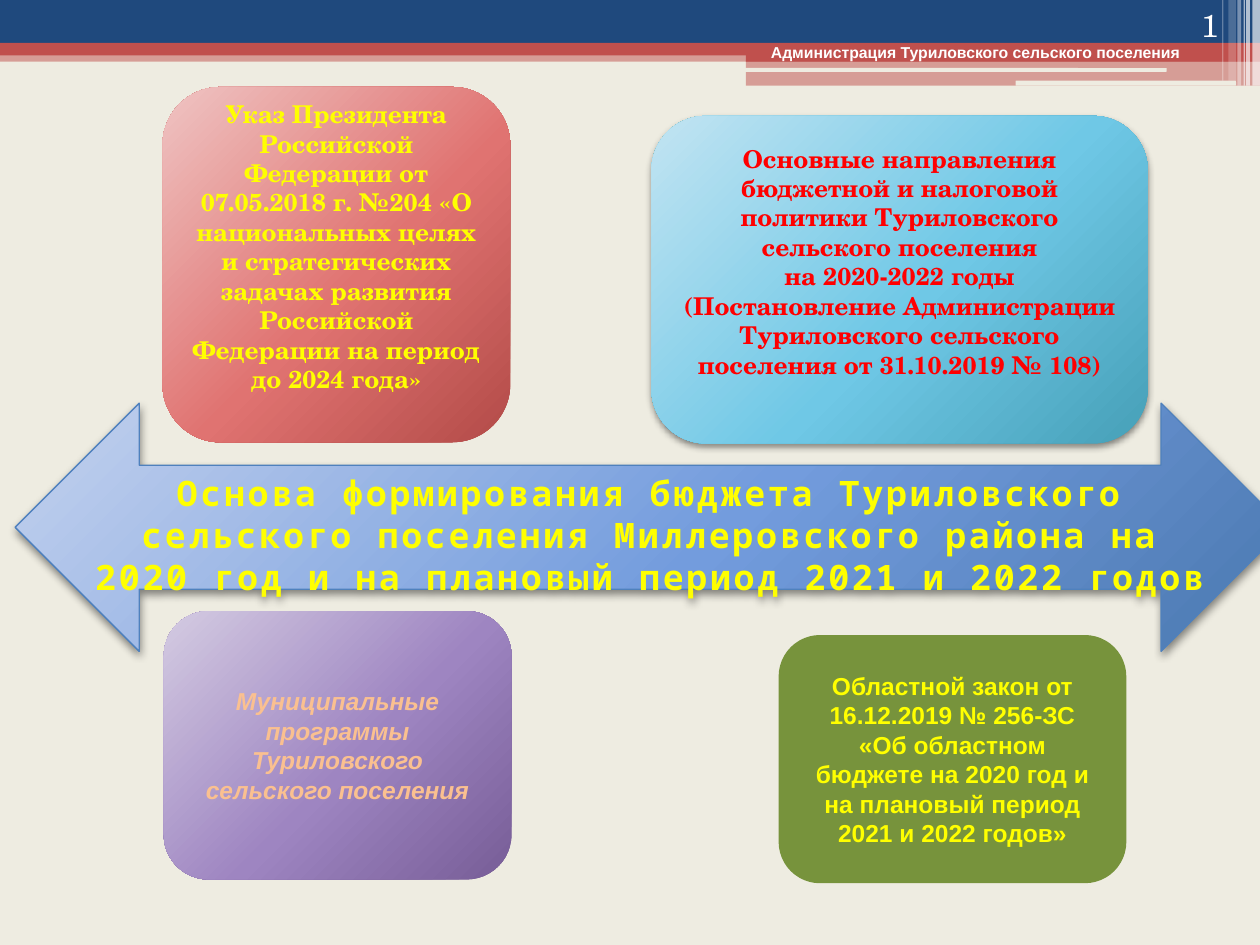
from lxml import etree
from pptx import Presentation
from pptx.dml.color import RGBColor
from pptx.enum.shapes import MSO_SHAPE
from pptx.enum.text import MSO_ANCHOR, PP_ALIGN
from pptx.oxml.ns import qn
from pptx.util import Pt

PX = 9144  # EMU in one px, 100 px to the inch

RECTANGLE = MSO_SHAPE.RECTANGLE
ROUNDED = MSO_SHAPE.ROUNDED_RECTANGLE
ARROW = MSO_SHAPE.LEFT_RIGHT_ARROW
TOP, MIDDLE, BOTTOM = MSO_ANCHOR.TOP, MSO_ANCHOR.MIDDLE, MSO_ANCHOR.BOTTOM
LEFT, CENTER, RIGHT = PP_ALIGN.LEFT, PP_ALIGN.CENTER, PP_ALIGN.RIGHT

CREAM = RGBColor(0xEE, 0xEC, 0xE1)
NAVY = RGBColor(0x1F, 0x49, 0x7D)
BRICK = RGBColor(0xC0, 0x50, 0x4D)
WHITE = RGBColor(0xFF, 0xFF, 0xFF)
BLACK = RGBColor(0, 0, 0)
YELLOW = RGBColor(0xFF, 0xFF, 0)
RED = RGBColor(0xFF, 0, 0)
PEACH = RGBColor(0xFA, 0xC0, 0x90)
OLIVE = RGBColor(0x77, 0x93, 0x3C)
STEEL = RGBColor(0x4F, 0x81, 0xBD)

# Light, middle and dark colour of each gradient
RED_SHADES = (RGBColor(0xEF, 0xC4, 0xC3), RGBColor(0xE0, 0x73, 0x71), RGBColor(0xB3, 0x4B, 0x48))
AQUA_SHADES = (RGBColor(0xC2, 0xE4, 0xF2), RGBColor(0x6F, 0xC8, 0xE6), RGBColor(0x46, 0xA0, 0xB8))
PURPLE_SHADES = (RGBColor(0xD4, 0xCB, 0xE2), RGBColor(0x9E, 0x85, 0xC1), RGBColor(0x77, 0x5D, 0x97))
BLUE_SHADES = (RGBColor(0xC4, 0xD2, 0xEE), RGBColor(0x73, 0x9C, 0xDD), RGBColor(0x4A, 0x78, 0xB0))
GRADIENT_STOPS = (0, 55, 100)

SANS, SERIF, MONO = "Arial", "TeX Gyre Schola", "Noto Sans Mono"


def add_element(parent, tag, **attributes):
    element = etree.SubElement(parent, qn(tag))
    for name, value in attributes.items():
        element.set(name, str(value))
    return element


def set_alpha(color_element, percent):
    add_element(color_element, "a:alpha", val=percent * 1000)


def set_gradient(shape, shades):
    shape.fill.gradient()
    gradient = shape._element.spPr.find(qn("a:gradFill"))
    for child in list(gradient):
        gradient.remove(child)
    stops = add_element(gradient, "a:gsLst")
    for position, color in zip(GRADIENT_STOPS, shades):
        stop = add_element(stops, "a:gs", pos=position * 1000)
        add_element(stop, "a:srgbClr", val=color)
    circle = add_element(gradient, "a:path", path="circle")
    add_element(circle, "a:fillToRect", l=-40000, t=-90000, r=140000, b=190000)


def set_shadow(shape):
    effects = shape._element.spPr.find(qn("a:effectLst"))
    shadow = add_element(effects, "a:outerShdw", blurRad=Pt(4), dist=Pt(2),
                         dir=90 * 60000, rotWithShape=0)
    set_alpha(add_element(shadow, "a:srgbClr", val=BLACK), 45)


def add_box(slide, kind, box, fill, alpha=100, shadow=False):
    """Add a borderless shape; fill is one colour or a tuple of shades."""
    shape = slide.shapes.add_shape(kind, *(length * PX for length in box))
    shape.shadow.inherit = False
    shape.line.fill.background()
    if isinstance(fill, RGBColor):
        shape.fill.solid()
        shape.fill.fore_color.rgb = fill
        if alpha < 100:
            set_alpha(shape._element.spPr.find(qn("a:solidFill"))[0], alpha)
    else:
        set_gradient(shape, fill)
    if shadow:
        set_shadow(shape)
    return shape


def write(shape, lines, font, size, color, align=CENTER, anchor=MIDDLE,
          bold=True, italic=False):
    frame = shape.text_frame
    frame.word_wrap = True
    frame.vertical_anchor = anchor
    frame.text = "\n".join(lines)
    for paragraph in frame.paragraphs:
        paragraph.alignment = align
        paragraph.font.name = font
        paragraph.font.size = Pt(size)
        paragraph.font.bold = bold
        paragraph.font.italic = italic
        paragraph.font.color.rgb = color


def add_label(slide, box, text, *style, **options):
    label = slide.shapes.add_textbox(*(length * PX for length in box))
    write(label, [text], *style, **options)


def add_header(slide, left, top, width):
    # Full-width bands and the tab on the right
    tab = 592
    for x, y, height, color, alpha in (
        (0, 40, 9, BRICK, 50),
        (0, 0, 34, NAVY, 100),
        (0, 34, 10, BRICK, 100),
        (tab, 39, 10, BRICK, 100),
        (tab, 48, 20, BRICK, 50),
    ):
        add_box(slide, RECTANGLE, (left + x, top + y, width - x, height), color, alpha)

    # Cream slits in the tab
    for x, y, slit_width, height in ((591, 54, 335, 3), (806, 64, 175, 4)):
        add_box(slide, ROUNDED, (left + x, top + y, slit_width, height), CREAM)

    # Translucent stripes, given from the right edge
    for offset, stripe_width, height, alpha in (
        (6, 6, 68, 65), (11, 3, 68, 65), (13, 1, 68, 60),
        (18, 3, 68, 40), (25, 6, 64, 20), (30, 1, 64, 30),
    ):
        add_box(slide, RECTANGLE, (left + width - offset, top, stripe_width, height),
                WHITE, alpha)

    add_label(slide, (left + 602, top + 29, 370, 25),
              "Администрация Туриловского сельского поселения",
              SANS, 9, WHITE, align=LEFT, anchor=TOP)
    add_label(slide, (left + 894, top, 83, 40), "1", SERIF, 18, WHITE,
              align=RIGHT, anchor=BOTTOM, bold=False)


def add_card(slide, box, fill, lines, font, color, bottom=5, shadow=False, italic=False):
    card = add_box(slide, ROUNDED, box, fill, shadow=shadow)
    write(card, lines, font, 14, color, italic=italic)
    card.text_frame.margin_bottom = bottom * PX


def add_arrow(slide, box, text):
    arrow = add_box(slide, ARROW, box, BLUE_SHADES, shadow=True)
    arrow.line.color.rgb = STEEL
    arrow.line.width = Pt(0.75)
    write(arrow, [text], MONO, 20, YELLOW, anchor=TOP)
    for run in arrow.text_frame.paragraphs[0].runs:
        run.font._element.set("spc", "150")  # letter spacing of 1.5 pt


def main():
    presentation = Presentation()
    presentation.slide_width = 1000 * PX
    presentation.slide_height = 750 * PX
    slide = presentation.slides.add_slide(presentation.slide_layouts[6])
    slide.background.fill.solid()
    slide.background.fill.fore_color.rgb = CREAM

    add_header(slide, 0, 0, 1000)

    # Four sources around the arrow
    add_card(slide, (129, 69, 276, 282), RED_SHADES, [
        "Указ Президента Российской Федерации от 07.05.2018 г. №204 «О национальных "
        "целях и стратегических задачах развития Российской Федерации на период "
        "до 2024 года»"], SERIF, YELLOW, bottom=34)
    add_card(slide, (517, 92, 394, 260), AQUA_SHADES, [
        "Основные направления бюджетной и налоговой политики Туриловского "
        "сельского поселения",
        "на 2020-2022 годы",
        "(Постановление Администрации Туриловского сельского поселения "
        "от 31.10.2019 № 108)"], SERIF, RED, bottom=34, shadow=True)
    add_card(slide, (130, 485, 276, 213), PURPLE_SHADES, [
        "Муниципальные программы Туриловского сельского поселения"],
        SANS, PEACH, italic=True)
    add_card(slide, (618, 504, 276, 197), OLIVE, [
        "Областной закон от 16.12.2019 № 256-ЗС «Об областном бюджете на 2020 год "
        "и на плановый период 2021 и 2022 годов»"], SANS, YELLOW)

    add_arrow(slide, (12, 320, 1008, 197),
              "Основа формирования бюджета Туриловского сельского поселения "
              "Миллеровского района на 2020 год и на плановый период 2021 и 2022 годов")

    presentation.save("out.pptx")


if __name__ == "__main__":
    main()
